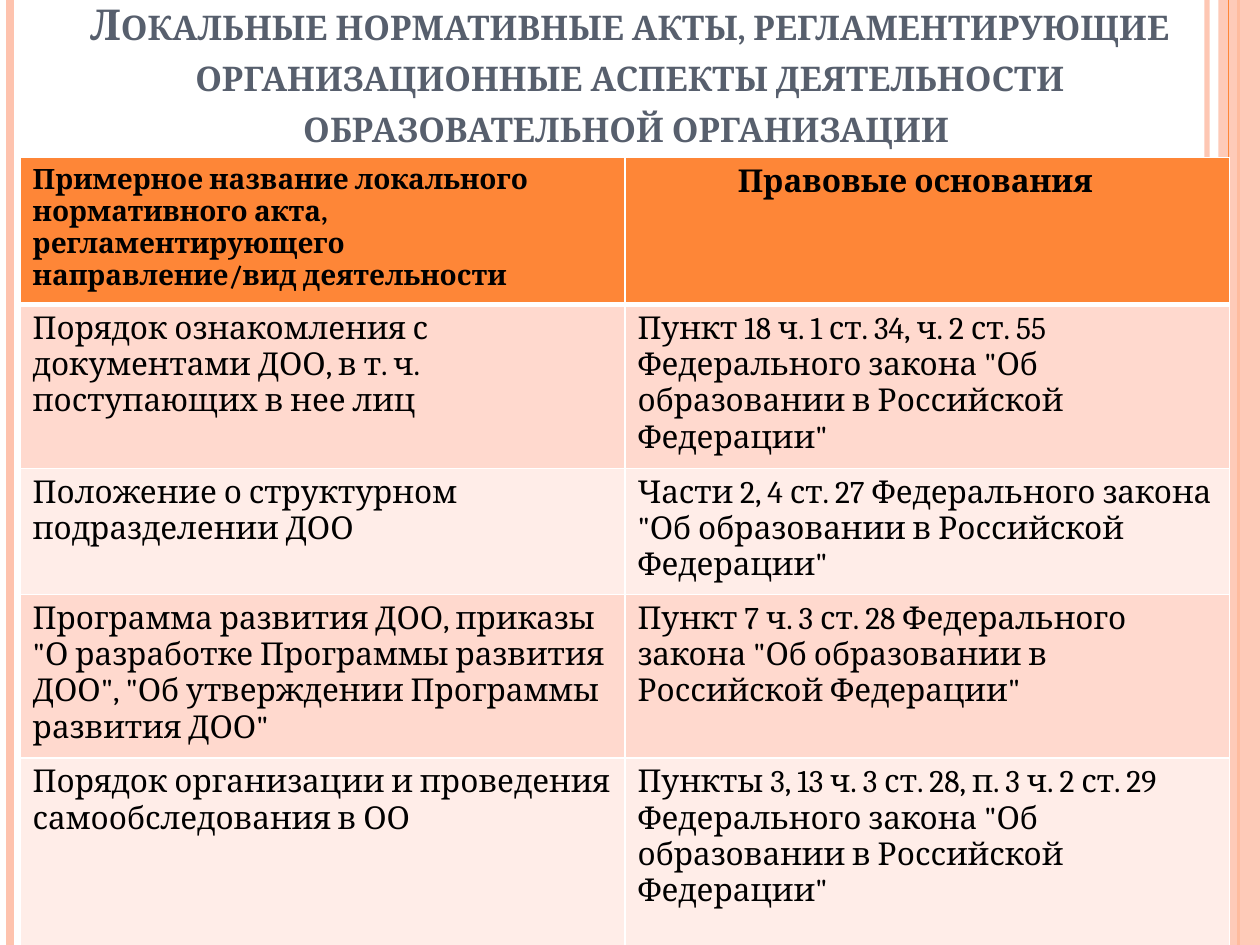
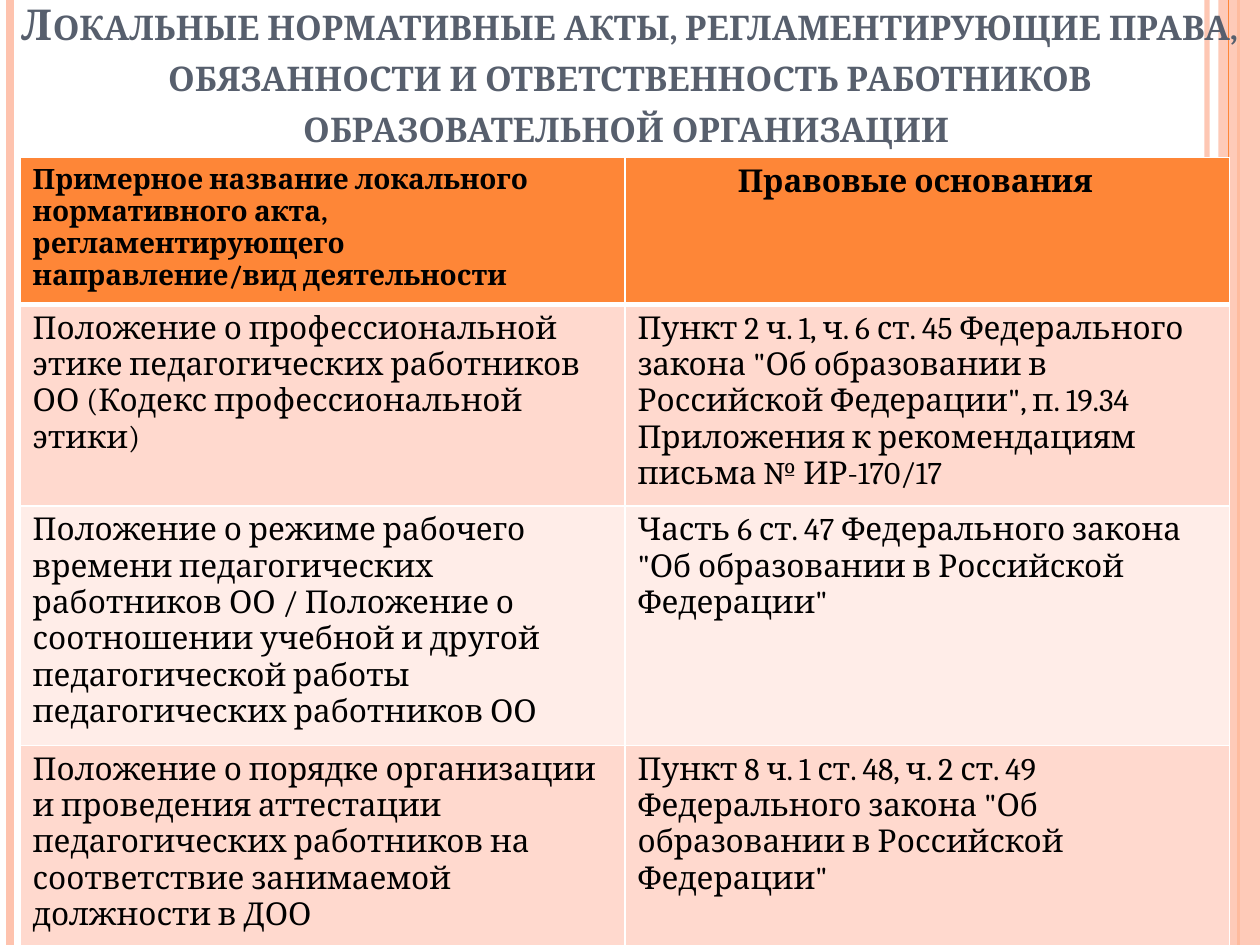
from lxml import etree
from pptx import Presentation
from pptx.dml.color import RGBColor
from pptx.enum import shapes, text
from pptx.oxml.ns import qn
from pptx.util import Inches, Pt

# Content: title, table rows and row heights of each slide
HEADER = ("Примерное название локального нормативного акта, регламентирующего "
          "направление/вид деятельности", "Правовые основания")
SLIDES = [
    {
        "title": "Локальные нормативные акты, регламентирующие организационные "
                 "аспекты деятельности образовательной организации ",
        "rows": [
            ("Порядок ознакомления с документами ДОО, в т. ч. поступающих в нее лиц",
             'Пункт 18 ч. 1 ст. 34, ч. 2 ст. 55 Федерального закона "Об образовании '
             'в Российской Федерации"'),
            ("Положение о структурном подразделении ДОО",
             'Части 2, 4 ст. 27 Федерального закона "Об образовании в Российской '
             'Федерации"'),
            ('Программа развития ДОО, приказы "О разработке Программы развития ДОО", '
             '"Об утверждении Программы развития ДОО"',
             'Пункт 7 ч. 3 ст. 28 Федерального закона "Об образовании в Российской '
             'Федерации"'),
            ("Порядок организации и проведения самообследования в ОО",
             'Пункты 3, 13 ч. 3 ст. 28, п. 3 ч. 2 ст. 29 Федерального закона '
             '"Об образовании в Российской Федерации"'),
        ],
        "heights": [1.26, 0.97, 1.25, 1.54],
    },
    {
        "title": "Локальные нормативные акты, регламентирующие права, обязанности "
                 "и ответственность работников образовательной организации ",
        "rows": [
            ("Положение о профессиональной этике педагогических работников ОО "
             "(Кодекс профессиональной этики)",
             'Пункт 2 ч. 1, ч. 6 ст. 45 Федерального закона "Об образовании в '
             'Российской Федерации", п. 19.34 Приложения к рекомендациям письма '
             '№ ИР-170/17'),
            ("Положение о режиме рабочего времени педагогических работников ОО / "
             "Положение о соотношении учебной и другой педагогической работы "
             "педагогических работников ОО",
             'Часть 6 ст. 47 Федерального закона "Об образовании в Российской '
             'Федерации"'),
            ("Положение о порядке организации и проведения аттестации педагогических "
             "работников на соответствие занимаемой должности в ДОО",
             'Пункт 8 ч. 1 ст. 48, ч. 2 ст. 49 Федерального закона "Об образовании '
             'в Российской Федерации"'),
        ],
        "heights": [1.55, 1.83, 1.83],
    },
]

# Shared look
FONT = "Cambria"
ORANGE, PEACH, SLATE, BLACK, WHITE = "FE8637", "FEC3AE", "575F6D", "000000", "FFFFFF"
BANDS = ("FFD9CE", "FFEDE8")
WIDTH, HEIGHT = 10, 7.5
TABLE_LEFT, TABLE_TOP, COL_WIDTH, HEADER_HEIGHT = 0.16, 1.25, 4.8, 1.12
# x, colour, width in points, opacity in percent
LEFT_STRIPES = [(9.58, PEACH, 3, 93), (0.08, PEACH, 4.5, 100), (9.83, ORANGE, 1.5, 100)]
EDGE_STRIPE = (9.75, ORANGE, 0.75, 100)


def rgb(value):
    return RGBColor.from_string(value)


def set_alpha(parent, percent):
    color = next(parent.iter(qn("a:srgbClr")))
    etree.SubElement(color, qn("a:alpha"), val=str(percent * 1000))


def write(tf, words, size, color=BLACK, bold=False, align=text.PP_ALIGN.LEFT,
          small_caps=False):
    tf.word_wrap = True
    p = tf.paragraphs[0]
    p.alignment = align
    r = p.add_run()
    r.text = words
    r.font.name, r.font.size, r.font.bold = FONT, Pt(size), bold
    r.font.color.rgb = rgb(color)
    if small_caps:
        r.font._element.set("cap", "small")


def add_stripe(slide, x, color, width, alpha):
    line = slide.shapes.add_connector(shapes.MSO_CONNECTOR.STRAIGHT,
                                      Inches(x), 0, Inches(x), Inches(HEIGHT))
    line.line.color.rgb = rgb(color)
    line.line.width = Pt(width)
    if alpha < 100:
        set_alpha(line.line._ln, alpha)
    etree.SubElement(line._element.spPr, qn("a:effectLst"))


def add_frame(slide):
    for stripe in LEFT_STRIPES:
        add_stripe(slide, *stripe)
    band = slide.shapes.add_shape(shapes.MSO_SHAPE.RECTANGLE, Inches(9.67), 0,
                                  Inches(0.33), Inches(HEIGHT))
    band.shadow.inherit = False
    band.fill.solid()
    band.fill.fore_color.rgb = rgb(PEACH)
    set_alpha(band._element.spPr, 87)
    band.line.fill.background()
    add_stripe(slide, *EDGE_STRIPE)


def add_title(slide, words):
    tf = slide.shapes.add_textbox(0, 0, Inches(WIDTH), Inches(TABLE_TOP)).text_frame
    tf.vertical_anchor = text.MSO_ANCHOR.BOTTOM
    write(tf, words, 24.3, SLATE, bold=True, align=text.PP_ALIGN.CENTER, small_caps=True)


def style_cell(cell, fill, bottom=1):
    tcPr = cell._tc.get_or_add_tcPr()
    for side, width in (("L", 1), ("R", 1), ("T", 1), ("B", bottom)):
        ln = etree.SubElement(tcPr, qn("a:ln" + side), w=str(Pt(width)))
        solid = etree.SubElement(ln, qn("a:solidFill"))
        etree.SubElement(solid, qn("a:srgbClr"), val=WHITE)
    cell.fill.solid()
    cell.fill.fore_color.rgb = rgb(fill)


def add_acts_table(slide, rows, heights):
    heights = [HEADER_HEIGHT] + heights
    table = slide.shapes.add_table(len(heights), 2, Inches(TABLE_LEFT), Inches(TABLE_TOP),
                                   Inches(2 * COL_WIDTH), Inches(sum(heights))).table
    for column in table.columns:
        column.width = Inches(COL_WIDTH)
    for row, height in zip(table.rows, heights):
        row.height = Inches(height)

    # Header row
    act, basis = table.rows[0].cells
    write(act.text_frame, HEADER[0], 16, bold=True)
    write(basis.text_frame, HEADER[1], 18, bold=True, align=text.PP_ALIGN.CENTER)
    basis.margin_right = Inches(0.29)
    for cell in (act, basis):
        style_cell(cell, ORANGE, bottom=3)

    # Banded body rows
    for i, words in enumerate(rows):
        for j, word in enumerate(words):
            cell = table.cell(i + 1, j)
            write(cell.text_frame, word, 18)
            style_cell(cell, BANDS[i % 2])
            if i == 0:
                top = cell._tc.tcPr.find(qn("a:lnT"))
                top.set("w", str(Pt(3)))


def main():
    prs = Presentation()
    prs.slide_width, prs.slide_height = Inches(WIDTH), Inches(HEIGHT)
    for content in SLIDES:
        slide = prs.slides.add_slide(prs.slide_layouts[6])
        add_frame(slide)
        add_title(slide, content["title"])
        add_acts_table(slide, content["rows"], content["heights"])
    prs.save("out.pptx")


if __name__ == "__main__":
    main()
